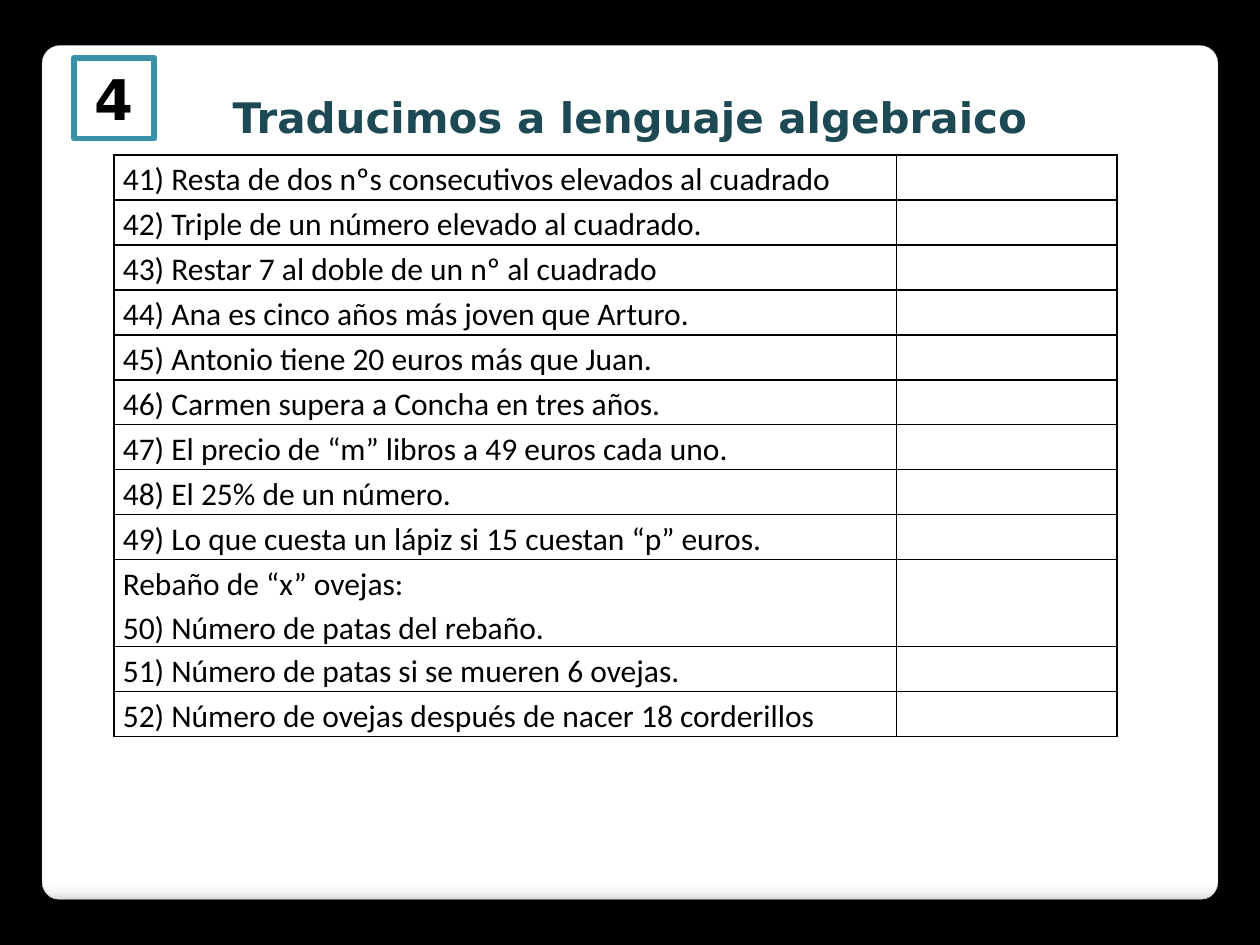
from pptx import Presentation
from pptx.dml.color import RGBColor as Rgb
from pptx.enum.shapes import MSO_SHAPE as Kind
from pptx.enum.text import MSO_ANCHOR as Anchor, PP_ALIGN as Align
from pptx.oxml import parse_xml as to_xml
from pptx.oxml.ns import nsdecls, qn
from pptx.util import Pt

HUES = {"black": "000000", "white": "FFFFFF", "pale": "F7F7F7",
        "gray": "DADADA", "edge": "A4A4A4", "title": "1C4954", "teal": "3891A7"}
HEAD, BODY = "DejaVu Sans", "Calibri"
ROW, TALL = 25.7, 49.7
TASKS = [
    ["41) Resta de dos nºs consecutivos elevados al cuadrado"],
    ["42) Triple de un número elevado al cuadrado."],
    ["43) Restar 7 al doble de un nº al cuadrado"],
    ["44) Ana es cinco años más joven que Arturo."],
    ["45) Antonio tiene 20 euros más que Juan."],
    ["46) Carmen supera a Concha en tres años."],
    ["47) El precio de “m” libros a 49 euros cada uno."],
    ["48) El 25% de un número."],
    ["49) Lo que cuesta un lápiz si 15 cuestan “p” euros."],
    ["Rebaño de “x” ovejas:", "50) Número de patas del rebaño."],
    ["51) Número de patas si se mueren 6 ovejas."],
    ["52) Número de ovejas después de nacer 18 corderillos"],
]


def hue(name):
    """Return the named colour."""
    return Rgb.from_string(HUES[name])


def paint(item, name):
    """Fill an item with one colour."""
    item.fill.solid()
    item.fill.fore_color.rgb = hue(name)


def add_run(para, text, font, size, name, bold=False):
    """Add one styled run to a paragraph."""
    run = para.add_run()
    run.text = text
    run.font.name, run.font.size, run.font.bold = font, Pt(size), bold
    run.font.color.rgb = hue(name)


def add_head(frame, text, size, name):
    """Write one bold centred line in a text frame."""
    frame.vertical_anchor = Anchor.MIDDLE
    para = frame.paragraphs[0]
    para.alignment = Align.CENTER
    add_run(para, text, HEAD, size, name, True)


def add_shape(slide, kind, box, line, width):
    """Add an outlined shape without a shadow."""
    shape = slide.shapes.add_shape(kind, *map(Pt, box))
    shape.shadow.inherit = False
    shape.line.color.rgb = hue(line)
    shape.line.width = Pt(width)
    return shape


def add_panel(slide, box):
    """Draw the rounded white sheet with its shaded foot and soft shadow."""
    panel = add_shape(slide, Kind.ROUNDED_RECTANGLE, box, "edge", 0.16)
    panel.adjustments[0] = 0.021
    panel.fill.gradient()
    panel.fill.gradient_angle = 270
    props = panel.element.spPr
    stops = props.find(".//" + qn("a:gsLst"))
    for stop in list(stops):
        stops.remove(stop)
    for pos, name in [(0, "white"), (98, "white"), (99, "pale"), (100, "gray")]:
        stops.append(to_xml(
            f'<a:gs {nsdecls("a")} pos="{pos * 1000}">'
            f'<a:srgbClr val="{HUES[name]}"/></a:gs>'))
    props.find(qn("a:effectLst")).append(to_xml(
        f'<a:outerShdw {nsdecls("a")} blurRad="{Pt(6)}" dist="{Pt(4)}" '
        f'dir="5400000" rotWithShape="0"><a:srgbClr val="{HUES["black"]}">'
        '<a:alpha val="25000"/></a:srgbClr></a:outerShdw>'))


def add_title(slide, box):
    """Write the slide title."""
    frame = slide.shapes.add_textbox(*map(Pt, box)).text_frame
    frame.word_wrap = True
    add_head(frame, "Traducimos a lenguaje algebraico", 24, "title")


def add_badge(slide, box):
    """Draw the framed sheet number."""
    badge = add_shape(slide, Kind.RECTANGLE, box, "teal", 3.35)
    paint(badge, "white")
    add_head(badge.text_frame, "4", 32, "black")


def style_cell(cell, lines):
    """Give a cell its borders, fill, margins and text."""
    props = cell._tc.get_or_add_tcPr()
    for side in "LRTB":
        props.append(to_xml(
            f'<a:ln{side} {nsdecls("a")} w="{Pt(1)}"><a:solidFill>'
            f'<a:srgbClr val="{HUES["black"]}"/></a:solidFill></a:ln{side}>'))
    paint(cell, "white")
    cell.margin_left = cell.margin_right = Pt(5)
    cell.margin_top = cell.margin_bottom = 0
    frame = cell.text_frame
    frame.paragraphs[0].font.size = Pt(18)
    for i, text in enumerate(lines):
        para = frame.add_paragraph() if i else frame.paragraphs[0]
        para.line_spacing = 1.15
        add_run(para, text, BODY, 18, "black")


def add_tasks(slide, box):
    """Build the table of phrases with an empty answer column."""
    table = slide.shapes.add_table(len(TASKS), 2, *map(Pt, box)).table
    table.first_row = table.horz_banding = False
    for col, part in zip(table.columns, (0.78, 0.22)):
        col.width = Pt(round(box[2] * part, 2))
    for row, lines in zip(table.rows, TASKS):
        row.height = Pt(TALL if len(lines) > 1 else ROW)
        for cell, text in zip(row.cells, (lines, [])):
            style_cell(cell, text)


def main():
    """Build and save the slide."""
    deck = Presentation()
    deck.slide_width, deck.slide_height = Pt(720), Pt(540)
    slide = deck.slides.add_slide(deck.slide_layouts[6])
    paint(slide.background, "black")
    add_panel(slide, (24, 26, 672, 488))
    add_title(slide, (28, 48.5, 664, 36))
    add_tasks(slide, (65.2, 88.6, 573.2, 332.4))
    add_badge(slide, (42.5, 33.2, 45.7, 46))
    deck.save("out.pptx")


if __name__ == "__main__":
    main()
